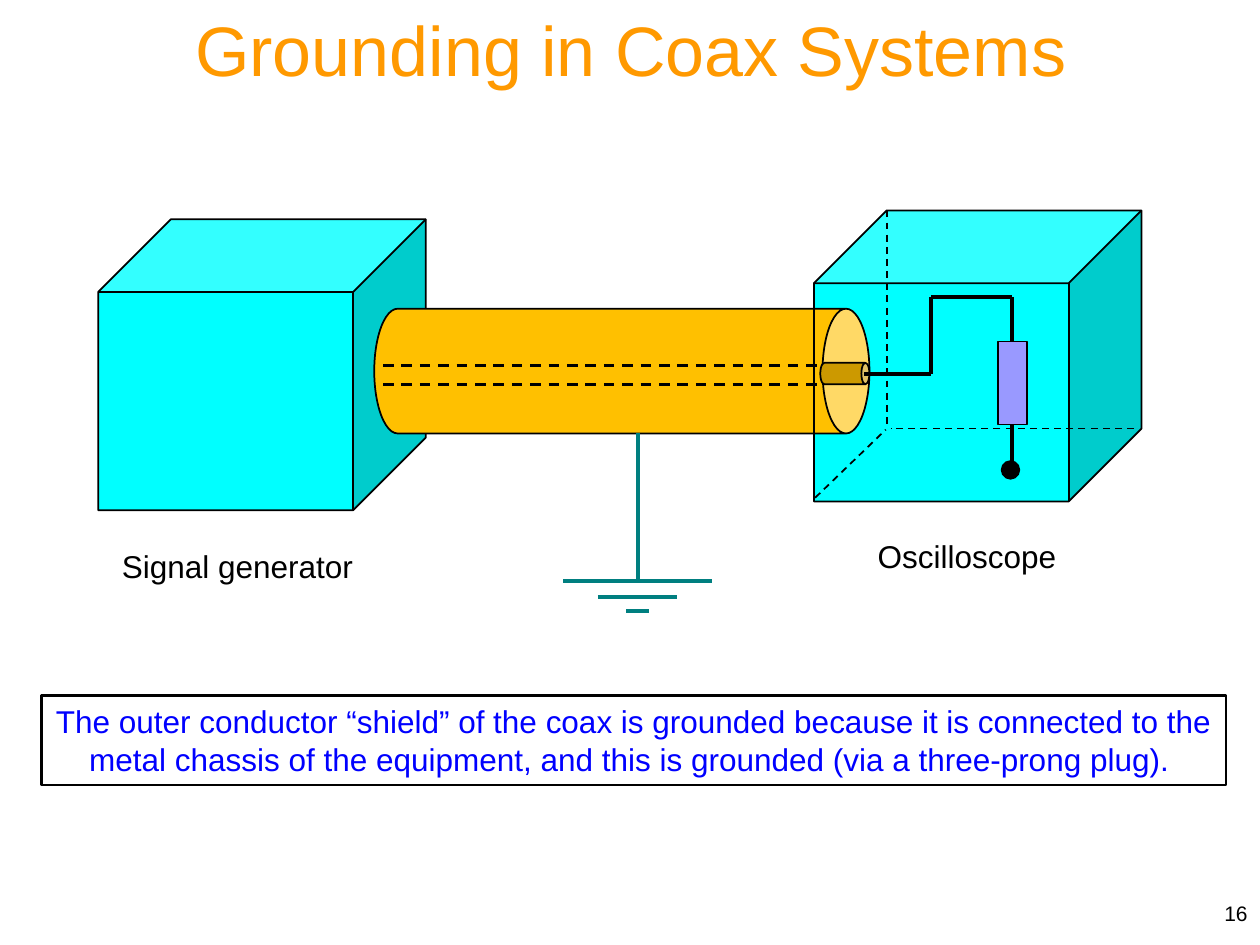
from pptx import Presentation
from pptx.dml.color import RGBColor
from pptx.enum.dml import MSO_LINE
from pptx.enum.shapes import MSO_CONNECTOR, MSO_SHAPE
from pptx.enum.text import MSO_ANCHOR, PP_ALIGN
from pptx.oxml.ns import qn
from pptx.util import Inches, Pt
from lxml.etree import SubElement

COLS, ROWS = 100, 75
WIDE, HIGH = Inches(10), Inches(7.5)
BLACK, CYAN, TEAL = "000000", "00FFFF", "007F80"


def col(n):
    return round(WIDE * n / COLS)


def row(n):
    return round(HIGH * n / ROWS)


def frame(x, y, w, h):
    return col(x), row(y), col(w), row(h)


def tint(target, code):
    target.rgb = RGBColor.from_string(code)


def add_block(slide, kind, box, fill=None, weight=1):
    block = slide.shapes.add_shape(kind, *frame(*box))
    block.shadow.inherit = False
    if fill:
        block.fill.solid()
        tint(block.fill.fore_color, fill)
    else:
        block.fill.background()
    tint(block.line.color, BLACK)
    block.line.width = Pt(weight)
    return block


def add_tube(slide, box, fill):
    """Lay a can on its side, open end to the right."""
    tube = add_block(slide, MSO_SHAPE.CAN, box, fill)
    tube.adjustments[0] = 0.376
    tube.rotation = 90


def add_wire(slide, start, end, weight=2.25, color=BLACK, dash=False):
    wire = slide.shapes.add_connector(
        MSO_CONNECTOR.STRAIGHT, col(start[0]), row(start[1]), col(end[0]), row(end[1]))
    tint(wire.line.color, color)
    wire.line.width = Pt(weight)
    if dash:
        wire.line.dash_style = MSO_LINE.DASH
    SubElement(wire._element.spPr, qn("a:effectLst"))
    return wire


def set_text(shape, text, size, color, align=PP_ALIGN.CENTER, wrap=False,
             anchor=MSO_ANCHOR.TOP):
    body = shape.text_frame
    body.text = text
    body.word_wrap = wrap
    body.vertical_anchor = anchor
    line = body.paragraphs[0]
    line.alignment = align
    font = line.runs[0].font
    font.name = "Arial"
    font.size = Pt(size)
    tint(font.color, color)


def add_label(slide, box, text, size=18, color=BLACK, **style):
    set_text(slide.shapes.add_textbox(*frame(*box)), text, size, color, **style)


def add_cable(slide):
    add_tube(slide, (44.4, 9.8, 9.9, 39.3), "FFC000")
    add_tube(slide, (66.2, 27.7, 1.7, 3.9), "CC9900")
    for y in (29, 30.5):
        add_wire(slide, (30.4, y), (65.2, y), 1.5, dash=True)


def add_ground(slide):
    mid = 50.6
    add_wire(slide, (mid, 34.4), (mid, 46.1), color=TEAL)
    for y, half in ((46.1, 5.9), (47.4, 3.15), (48.5, 0.9)):
        add_wire(slide, (mid - half, y), (mid + half, y), color=TEAL)


def add_edges(slide):
    """Draw the hidden edges of the scope and its front edge over the cable."""
    for start, end in (((70.4, 16.7), (70.4, 33.7)),
                       ((64.7, 39.5), (70.3, 34.1)),
                       ((90, 34), (70.7, 34))):
        add_wire(slide, start, end, 1, dash=True)
    add_wire(slide, (64.6, 22.5), (64.6, 39.8), 1)


def add_load(slide):
    mid, bend, top, low = 80.35, 73.9, 23.6, 29.7
    load = add_block(slide, MSO_SHAPE.RECTANGLE, (79.2, 27.1, 2.3, 6.6), "9999FF")
    add_wire(slide, (mid, 33.7), (mid, 37.3)).begin_connect(load, 2)
    add_block(slide, MSO_SHAPE.OVAL, (79.5, 36.6, 1.4, 1.4), BLACK)
    add_wire(slide, (68.6, low), (bend, low))
    add_wire(slide, (bend, low), (bend, top))
    add_wire(slide, (bend, top), (mid, top))
    add_wire(slide, (mid, top), (mid, 27.1)).end_connect(load, 0)


def main():
    deck = Presentation()
    deck.slide_width, deck.slide_height = WIDE, HIGH
    slide = deck.slides.add_slide(deck.slide_layouts[6])

    for x, y in ((64.6, 16.7), (7.8, 17.4)):
        add_block(slide, MSO_SHAPE.CUBE, (x, y, 26, 23.1), CYAN)
    add_label(slide, (14.1, 0, 71.9, 7.7), "Grounding in Coax Systems", 40, "FF9900")
    add_label(slide, (79.2, 70, 20.8, 5), "16", 12, align=PP_ALIGN.RIGHT,
              wrap=True, anchor=MSO_ANCHOR.MIDDLE)
    add_cable(slide)
    add_ground(slide)
    add_edges(slide)
    add_load(slide)

    note = add_block(slide, MSO_SHAPE.RECTANGLE, (3.3, 55.2, 94, 7.1), weight=1.5)
    set_text(note, "The outer conductor “shield” of the coax is grounded because it is "
             "connected to the metal chassis of the equipment, and this is grounded "
             "(via a three-prong plug). ", 18, "0000FF", wrap=True)
    add_label(slide, (8.6, 42.9, 20.5, 4), "Signal generator")
    add_label(slide, (68.6, 42.1, 16.3, 4), "Oscilloscope")
    deck.save("out.pptx")


if __name__ == "__main__":
    main()
